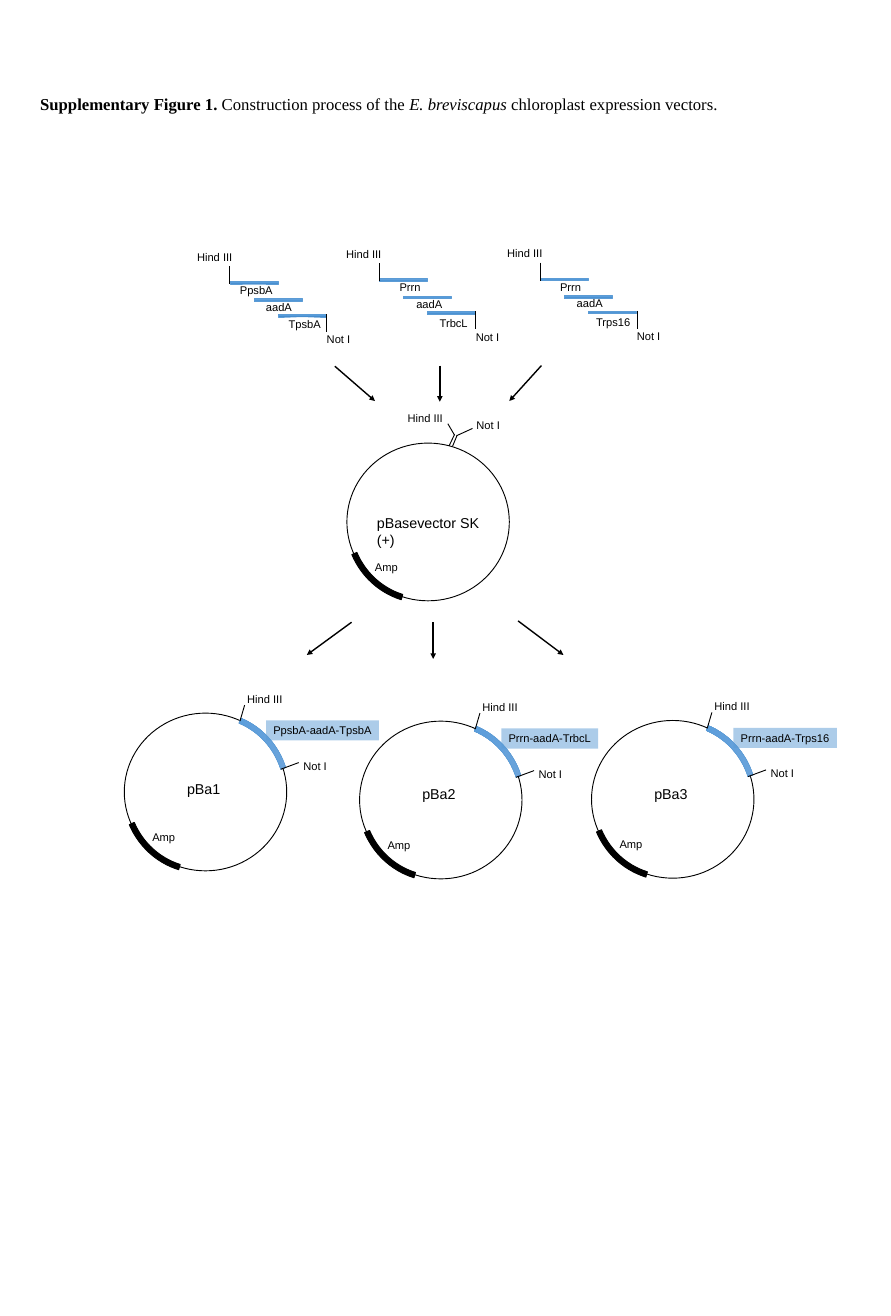
from copy import deepcopy

from pptx import Presentation
from pptx import util as u
from pptx.dml import color
from pptx.enum import shapes, text
from pptx.oxml import ns
from lxml import etree

COLOURS = {"ink": "000000", "blue": "5B9BD5",
           "light": "71A6DB", "middle": "559BDB", "deep": "448ACA"}
GRADIENT = [(0, "light"), (0.5, "middle"), (1, "deep")]
RING_WIDTH, RING_HEIGHT = 2.43, 2.36


def rgb(name):
    return color.RGBColor.from_string(COLOURS[name])


def add_span(para, words, size=12, font="Arial", bold=False, italic=False):
    span = para.add_run()
    span.text = words
    span.font.size = u.Pt(size)
    span.font.name = font
    span.font.bold = bold
    span.font.italic = italic
    span.font.color.rgb = rgb("ink")


def add_label(page, words, x, y, width=0.8, height=0.3, size=12):
    box = page.shapes.add_textbox(*map(u.Inches, (x, y, width, height)))
    box.text_frame.word_wrap = True
    box.text_frame.margin_right = 0
    add_span(box.text_frame.paragraphs[0], words, size=size)


def add_line(page, x1, y1, x2, y2, arrow=False):
    line = page.shapes.add_connector(
        shapes.MSO_CONNECTOR.STRAIGHT, *map(u.Inches, (x1, y1, x2, y2)))
    line.line.color.rgb = rgb("ink")
    line.line.width = u.Pt(1.5 if arrow else 1)
    properties = line._element.spPr
    if arrow:
        etree.SubElement(properties.find(ns.qn("a:ln")),
                         ns.qn("a:tailEnd"), type="triangle")
    etree.SubElement(properties, ns.qn("a:effectLst"))


def add_preset(page, kind, x, y, width, height, line="ink", weight=1):
    shape = page.shapes.add_shape(kind, *map(u.Inches, (x, y, width, height)))
    shape.shadow.inherit = False
    shape.fill.background()
    if line:
        shape.line.color.rgb = rgb(line)
        shape.line.width = u.Pt(weight)
    else:
        shape.line.fill.background()
    return shape


def fill_gradient(shape):
    shape.fill.gradient()
    shape.fill.gradient_angle = 270
    stops = shape._element.spPr.find(ns.qn("a:gradFill")).find(ns.qn("a:gsLst"))
    stops.append(deepcopy(stops[0]))
    for stop, (position, name) in zip(shape.fill.gradient_stops, GRADIENT):
        stop.position = position
        stop.color.rgb = rgb(name)


def add_arc(page, x, y, rotation, line="ink", weight=1):
    arc = add_preset(page, shapes.MSO_SHAPE.BLOCK_ARC, x, y,
                     RING_WIDTH, RING_HEIGHT, line, weight)
    for index, value in enumerate((117.818, 147.414, 0.035)):
        arc.adjustments[index] = value
    arc.rotation = rotation
    return arc


def add_caption(page, x, y, width, height):
    title = page.shapes.title
    title.left, title.top, title.width, title.height = map(
        u.Inches, (x, y, width, height))
    frame = title.text_frame
    frame.auto_size = text.MSO_AUTO_SIZE.NONE
    frame.vertical_anchor = text.MSO_ANCHOR.TOP
    frame.word_wrap = True
    para = frame.paragraphs[0]
    para.alignment = text.PP_ALIGN.LEFT
    para.line_spacing = 1.0
    para.space_before = para.space_after = u.Pt(12)
    for words, style in (
            ("Supplementary Figure 1.", {"bold": True}),
            (" Construction process of the ", {}),
            ("E. breviscapus", {"italic": True}),
            (" chloroplast expression vectors.", {})):
        add_span(para, words, size=18, font="Times New Roman", **style)


def add_cassette(page, x, y, genes):
    """Three stepped gene bars between two restriction sites."""
    for step, (drop, (gene, dx, dy)) in enumerate(zip((0, 0.26, 0.49), genes)):
        bar = add_preset(page, shapes.MSO_SHAPE.RECTANGLE, x + 0.36 * step,
                         y + drop, 0.72, 0.04, "blue", 0.5)
        fill_gradient(bar)
        add_label(page, gene, x + dx, y + dy)
    add_line(page, x, y - 0.23, x, y + 0.04)
    add_label(page, "Hind III", x - 0.59, y - 0.52)
    add_line(page, x + 1.45, y + 0.49, x + 1.45, y + 0.76)
    add_label(page, "Not I", x + 1.35, y + 0.72)


def add_ring(page, x, y):
    """Plasmid circle with its resistance gene."""
    add_preset(page, shapes.MSO_SHAPE.OVAL, x, y, RING_WIDTH, RING_HEIGHT)
    arc = add_arc(page, x - 0.06, y, 270)
    arc.fill.solid()
    arc.fill.fore_color.rgb = rgb("ink")
    add_label(page, "Amp", x + 0.32, y + 1.7)


def add_backbone(page, x, y):
    """Empty vector with its open cloning site."""
    add_ring(page, x, y)
    add_label(page, "pBasevector SK (+)", x + 0.35, y + 1.01, 1.94, 0.36, 15.4)
    for x1, y1, x2, y2 in ((1.53, 0.04, 1.61, -0.13), (1.58, 0.05, 1.65, -0.12),
                           (1.51, -0.29, 1.61, -0.12), (1.64, -0.11, 1.88, -0.22)):
        add_line(page, x + x1, y + y1, x + x2, y + y2)
    add_label(page, "Hind III", x + 0.81, y - 0.53)
    add_label(page, "Not I", x + 1.84, y - 0.42)


def add_construct(page, x, y, name, name_drop, insert, insert_width):
    """Finished vector with the inserted cassette."""
    add_ring(page, x, y)
    fill_gradient(add_arc(page, x + 0.08, y + 0.02, 95.4, "blue", 0.5))
    add_line(page, x + 1.73, y + 0.12, x + 1.8, y - 0.12)
    add_label(page, "Hind III", x + 1.74, y - 0.36)
    add_line(page, x + 2.34, y + 0.84, x + 2.61, y + 0.74)
    add_label(page, "Not I", x + 2.58, y + 0.64)
    add_label(page, name, x + 0.84, y + name_drop, height=0.36, size=15.4)
    # Half-transparent insert tag
    tag = add_preset(page, shapes.MSO_SHAPE.RECTANGLE, x + 2.12, y + 0.11,
                     insert_width, 0.3, line=None)
    tag.fill.solid()
    tag.fill.fore_color.rgb = rgb("blue")
    shade = tag._element.spPr.find(ns.qn("a:solidFill"))[0]
    etree.SubElement(shade, ns.qn("a:alpha"), val="50000")
    tag.text_frame.word_wrap = False
    para = tag.text_frame.paragraphs[0]
    para.alignment = text.PP_ALIGN.CENTER
    add_span(para, insert)


def main():
    deck = Presentation()
    deck.slide_width, deck.slide_height = u.Inches(13.33), u.Inches(19.69)
    page = deck.slides.add_slide(deck.slide_layouts[5])
    add_caption(page, 0.5, 1.36, 10.56, 0.4)

    # Gene cassettes
    for x, y, genes in (
            (3.44, 4.21, (("PpsbA", 0.05, -0.02), ("aadA", 0.44, 0.23),
                          ("TpsbA", 0.78, 0.49))),
            (5.67, 4.17, (("Prrn", 0.21, -0.03), ("aadA", 0.46, 0.23),
                          ("TrbcL", 0.81, 0.51))),
            (8.08, 4.16, (("Prrn", 0.2, -0.02), ("aadA", 0.45, 0.22),
                          ("Trps16", 0.74, 0.51)))):
        add_cassette(page, x, y, genes)

    add_backbone(page, 5.19, 6.63)

    # Finished vectors
    for construct in (
            (1.86, 10.67, "pBa1", 0.96, "PpsbA-aadA-TpsbA", 1.69),
            (5.38, 10.79, "pBa2", 0.91, "Prrn-aadA-TrbcL", 1.45),
            (8.85, 10.78, "pBa3", 0.92, "Prrn-aadA-Trps16", 1.55)):
        add_construct(page, *construct)

    # Arrows into and out of the empty vector
    for ends in ((5.01, 5.48, 5.61, 6), (6.58, 5.47, 6.58, 6.01),
                 (8.1, 5.47, 7.62, 6), (5.26, 9.31, 4.59, 9.8),
                 (6.48, 9.31, 6.48, 9.86), (7.75, 9.29, 8.43, 9.8)):
        add_line(page, *ends, arrow=True)

    deck.save("out.pptx")


if __name__ == "__main__":
    main()
